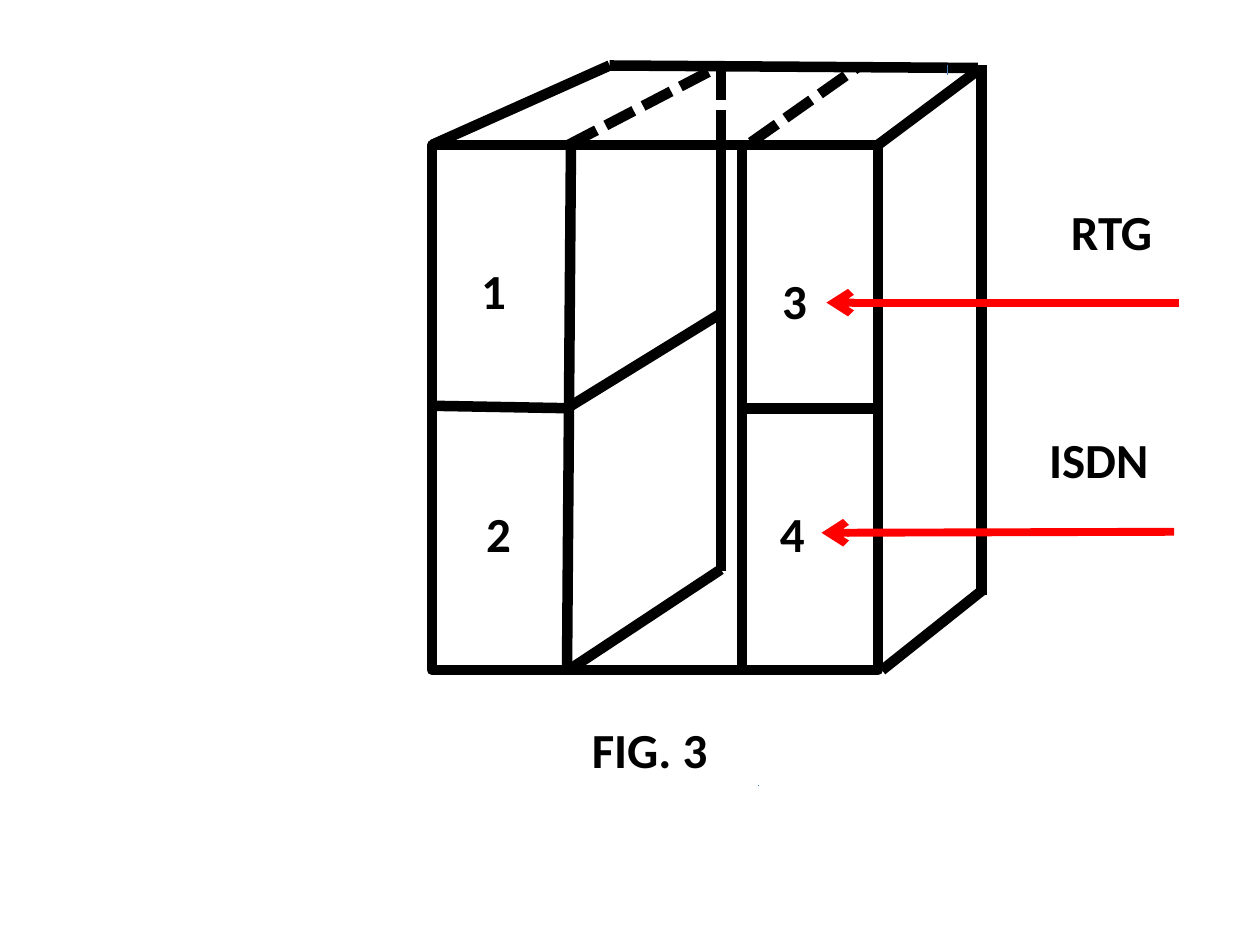
from lxml import etree
from pptx import Presentation
from pptx.dml.color import RGBColor
from pptx.enum.dml import MSO_LINE
from pptx.enum.shapes import MSO_CONNECTOR, MSO_SHAPE
from pptx.enum.text import MSO_AUTO_SIZE
from pptx.oxml.ns import qn
from pptx.util import Cm, Pt

STRAIGHT = MSO_CONNECTOR.STRAIGHT
RECTANGLE = MSO_SHAPE.RECTANGLE
DASH = MSO_LINE.SQUARE_DOT
FIT_TEXT = MSO_AUTO_SIZE.SHAPE_TO_FIT_TEXT

COLORS = {"ink": "000000", "paper": "FFFFFF", "signal": "FF0000", "mark": "4B7EBC"}

# Cabinet geometry in cm: front face, its dividers and the rear edges
LEFT, RIGHT, TOP, BOTTOM = 8.71, 17.7, 2.92, 13.51
LEFT_DIVIDER, RIGHT_DIVIDER = 11.51, 14.96
DIVIDER_FOOT = 11.43
SHELF = 8.23
REAR_LEFT, REAR_MIDDLE, REAR_RIGHT = 12.29, 14.53, 19.79
REAR_TOP = 1.32

# Edges as (start, end)
SOLID_EDGES = [
    # shelves
    ((LEFT, 8.18), (LEFT_DIVIDER, SHELF)),
    ((RIGHT, SHELF), (RIGHT_DIVIDER, SHELF)),
    # front dividers
    ((LEFT_DIVIDER, TOP), (DIVIDER_FOOT, BOTTOM)),
    ((RIGHT_DIVIDER, TOP), (RIGHT_DIVIDER, BOTTOM)),
    # top and right side
    ((LEFT, TOP), (REAR_LEFT, REAR_TOP)),
    ((RIGHT, TOP), (19.71, 1.42)),
    ((REAR_LEFT, REAR_TOP), (19.71, 1.37)),
    ((17.78, BOTTOM), (REAR_RIGHT, 11.91)),
    ((REAR_RIGHT, REAR_TOP), (REAR_RIGHT, 11.99)),
    # inner wall
    ((11.46, BOTTOM), (REAR_MIDDLE, 11.48)),
    ((REAR_MIDDLE, TOP), (REAR_MIDDLE, 11.51)),
    ((LEFT_DIVIDER, 8.18), (REAR_MIDDLE, 6.32)),
]
DASHED_EDGES = [
    ((11.46, TOP), (REAR_MIDDLE, REAR_TOP)),
    ((15.14, 2.87), (17.27, 1.37)),
    ((REAR_MIDDLE, 1.37), (REAR_MIDDLE, 2.87)),
]
SIGNALS = [((23.77, 6.1), (16.66, 6.1)), ((23.67, 10.72), (16.56, 10.74))]
SMALL_MARKS = [((15.29, 15.85), (15.29, 15.82)), ((19.1, 1.52), (19.1, REAR_TOP))]

# Labels as (text, left, top, width)
LABELS = [
    ("1", 9.45, 5.13, 1.02),
    ("2", 9.55, 10.03, 1.02),
    ("3", 15.52, 5.33, 1.02),
    ("4", 15.47, 10.03, 1.02),
    ("FIG. 3", 11.68, 14.38, 2.87),
    ("RTG", 21.34, 3.94, 2.16),
    ("ISDN", 20.9, 8.53, 2.54),
]
LABEL_HEIGHT = 1.45


def color(name):
    return RGBColor.from_string(COLORS[name])


def add_line(slide, start, end, ink="ink", width=6, dash=None, arrow=False):
    edge = slide.shapes.add_connector(STRAIGHT, *(Cm(v) for v in start + end))
    edge.line.color.rgb = color(ink)
    edge.line.width = Pt(width)
    if dash:
        edge.line.dash_style = dash
    properties = edge._element.spPr
    if arrow:
        outline = properties.find(qn("a:ln"))
        etree.SubElement(outline, qn("a:tailEnd"), type="arrow")
    etree.SubElement(properties, qn("a:effectLst"))


def add_label(slide, text, left, top, width, size=28, bold=True, ink="ink", font="Calibri"):
    label = slide.shapes.add_textbox(Cm(left), Cm(top), Cm(width), Cm(LABEL_HEIGHT))
    frame = label.text_frame
    frame.word_wrap = False
    frame.auto_size = FIT_TEXT
    run = frame.paragraphs[0].add_run()
    run.text = text
    run.font.name = font
    run.font.size = Pt(size)
    run.font.bold = bold
    run.font.color.rgb = color(ink)


def main():
    deck = Presentation()
    deck.slide_width, deck.slide_height = Cm(25.4), Cm(19.05)
    slide = deck.slides.add_slide(deck.slide_layouts[6])

    # Front face
    front = slide.shapes.add_shape(
        RECTANGLE, Cm(LEFT), Cm(TOP), Cm(RIGHT - LEFT), Cm(BOTTOM - TOP))
    front.shadow.inherit = False
    front.fill.solid()
    front.fill.fore_color.rgb = color("paper")
    front.line.color.rgb = color("ink")
    front.line.width = Pt(6)

    # Cabinet edges
    for start, end in SOLID_EDGES:
        add_line(slide, start, end)
    for start, end in DASHED_EDGES:
        add_line(slide, start, end, dash=DASH)
    for start, end in SMALL_MARKS:
        add_line(slide, start, end, ink="mark", width=0.75)

    # Incoming signals
    for start, end in SIGNALS:
        add_line(slide, start, end, ink="signal", width=4.5, arrow=True)

    # Compartment numbers, signal names and caption
    for label in LABELS:
        add_label(slide, *label)

    deck.save("out.pptx")


if __name__ == "__main__":
    main()
